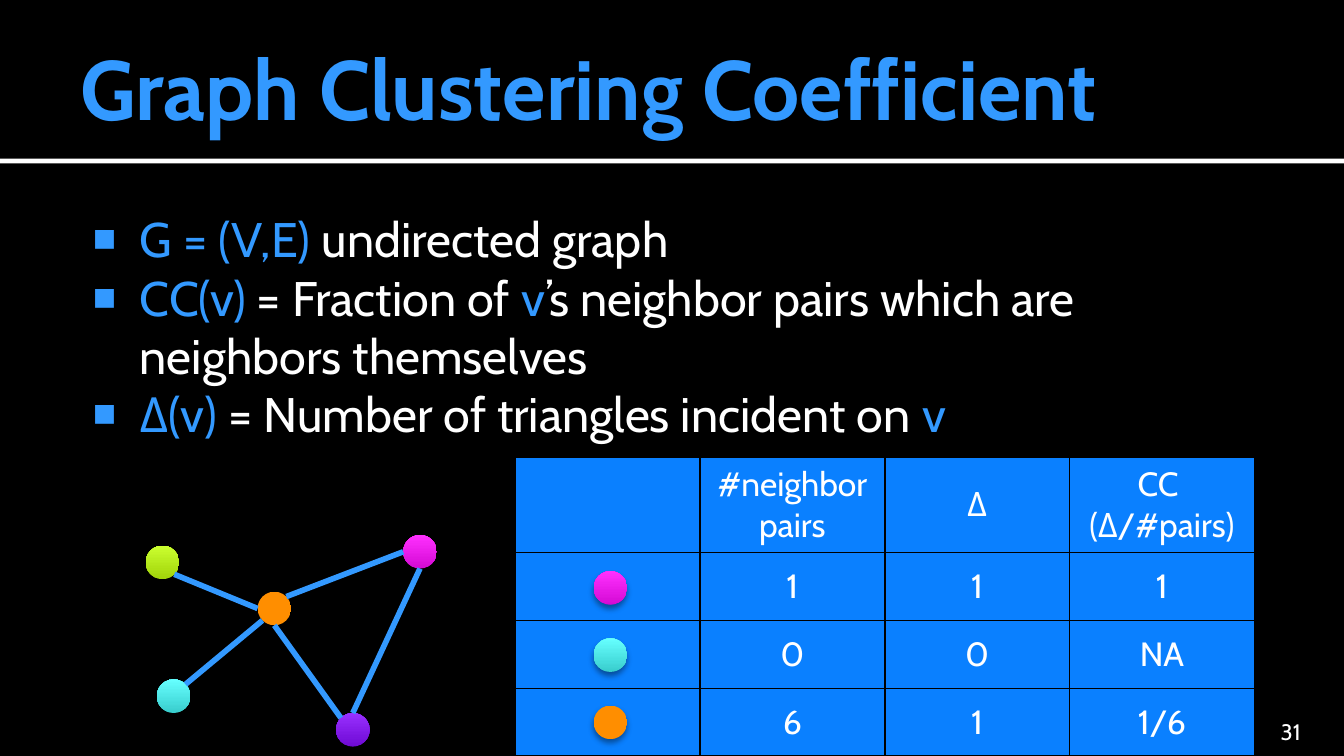
from lxml.etree import SubElement as Sub
from pptx import Presentation
from pptx.dml.color import RGBColor as RGB
from pptx.enum.shapes import MSO_CONNECTOR as Line, MSO_SHAPE as Kind
from pptx.enum.text import MSO_ANCHOR as Anchor, MSO_AUTO_SIZE as Auto, PP_ALIGN as Align
from pptx.oxml import parse_xml
from pptx.oxml.ns import nsdecls, qn
from pptx.util import Pt

HUE = {"black": "000000", "white": "FFFFFF", "blue": "3399FF", "cell": "0A80FF"}
# Each node colour runs from the bottom of the dot to its top.
NODE = {
    "orange": ("FF8E00", "FF8E00"),
    "purple": ("6F0AD4", "9830FF"),
    "pink": ("D40AD4", "FF30FF"),
    "cyan": ("38CDCD", "66FFFF"),
    "lime": ("A1D40A", "CBFF30"),
}
DOT = 18


def write(para, text, size, hue="white", bold=False):
    run = para.add_run()
    run.text = text
    form = {"name": "Cabin", "size": Pt(size), "bold": bold}
    for key, val in form.items():
        setattr(run.font, key, val)
    run.font.color.rgb = RGB.from_string(HUE[hue])


def add_dot(name, x, y):
    dot = slide.shapes.add_shape(Kind.OVAL, Pt(x), Pt(y), Pt(DOT), Pt(DOT))
    dot.fill.gradient()
    dot.fill.gradient_angle = 90
    for stop, tone in zip(dot.fill.gradient_stops, NODE[name]):
        stop.color.rgb = RGB.from_string(tone)
    dot.line.fill.background()
    dot.shadow.inherit = False
    dot._element.spPr.find(qn("a:effectLst")).append(parse_xml(
        f'<a:outerShdw {nsdecls("a")} blurRad="39000" dist="25400" dir="5400000" '
        'rotWithShape="0"><a:srgbClr val="000000"><a:alpha val="38000"/>'
        '</a:srgbClr></a:outerShdw>'))


deck = Presentation()
deck.slide_width, deck.slide_height = Pt(720), Pt(405)
slide = deck.slides.add_slide(deck.slide_layouts[1])
back = slide.background.fill
back.solid()
back.fore_color.rgb = RGB.from_string(HUE["black"])

# Rule under the title
rule = slide.shapes.add_shape(Kind.RECTANGLE, 0, Pt(85), Pt(720), Pt(2.6))
rule.fill.solid()
rule.fill.fore_color.rgb = RGB.from_string(HUE["white"])
rule.line.fill.background()
rule.shadow.inherit = False

# Text frames: place, insets (left, top, right, bottom), anchor
title, body = slide.placeholders
page = slide.shapes.add_textbox(0, 0, Pt(58), Pt(17))
frames = [
    (title, (36, 9.4, 648, 74), (7.2, 3.6, 3.6, 3.6), Anchor.MIDDLE),
    (body, (36, 105, 648, 273), (4.3, 7.2, 7.2, 3.6), Anchor.TOP),
    (page, (646, 382.3, 58, 16.6), (7.2, 3.6, 7.2, 0), Anchor.BOTTOM),
]
for box, place, inset, anchor in frames:
    for key, val in zip(("left", "top", "width", "height"), place):
        setattr(box, key, Pt(val))
    frame = box.text_frame
    form = {"word_wrap": True, "auto_size": Auto.NONE, "vertical_anchor": anchor}
    for key, val in form.items():
        setattr(frame, key, val)
    for side, val in zip(("left", "top", "right", "bottom"), inset):
        setattr(frame, "margin_" + side, Pt(val))

head = title.text_frame.paragraphs[0]
head.alignment = Align.LEFT
write(head, "Graph Clustering Coefficient", 45, "blue", True)
foot = page.text_frame.paragraphs[0]
foot.alignment = Align.RIGHT
write(foot, "31", 12)

# In each bullet, blue and white runs take turns.
bullets = [
    ("G = (V,E)", " undirected graph"),
    ("CC(v)", " = Fraction of ", "v", "’s neighbor pairs which are neighbors themselves"),
    ("Δ(v)", " = Number of triangles incident on ", "v"),
]
for i, parts in enumerate(bullets):
    para = body.text_frame.paragraphs[0] if i == 0 else body.text_frame.add_paragraph()
    para.space_before = Pt(0)
    props = para._p.get_or_add_pPr()
    props.set("marL", str(Pt(34.6)))
    props.set("indent", str(Pt(-25.2)))
    Sub(Sub(props, qn("a:buClr")), qn("a:srgbClr"), val=HUE["blue"])
    Sub(props, qn("a:buSzPct"), val="80000")
    Sub(props, qn("a:buChar"), char="■")
    for j, part in enumerate(parts):
        write(para, part, 26, ("blue", "white")[j % 2])

# Table of coefficients
rows = [
    ("", "#neighbor pairs", "Δ", "CC \n(Δ/#pairs)"),
    ("", "1", "1", "1"),
    ("", "0", "0", "NA"),
    ("", "6", "1", "1/6"),
]
table = slide.shapes.add_table(4, 4, Pt(276), Pt(244.8), Pt(396), Pt(160.2)).table
for col in table.columns:
    col.width = Pt(99)
for r, texts in enumerate(rows):
    table.rows[r].height = Pt(36.4 if r else 51)
    for c, text in enumerate(texts):
        cell = table.cell(r, c)
        cell.vertical_anchor = Anchor.MIDDLE
        props = cell._tc.get_or_add_tcPr()
        for side in ("lnL", "lnR", "lnT", "lnB"):
            edge = Sub(props, qn("a:" + side), w=str(Pt(1)))
            Sub(Sub(edge, qn("a:solidFill")), qn("a:srgbClr"), val=HUE["black"])
        cell.fill.solid()
        cell.fill.fore_color.rgb = RGB.from_string(HUE["cell"])
        for i, line in enumerate(text.split("\n") if text else []):
            para = cell.text_frame.paragraphs[0] if i == 0 else cell.text_frame.add_paragraph()
            para.alignment = Align.CENTER
            write(para, line, 18)

for i, name in enumerate(("pink", "cyan", "orange")):
    add_dot(name, 318, 306 + 36 * i)

# Graph: nodes, then edges between points on their rims
spots = {"orange": (138, 317), "purple": (180, 382), "pink": (216, 286.6),
         "cyan": (84, 364), "lime": (78, 292.3)}
for name, spot in spots.items():
    add_dot(name, *spot)

rim = {"n": (0, -1), "s": (0, 1), "w": (-1, 0), "ne": (0.71, -0.71),
       "nw": (-0.71, -0.71), "se": (0.71, 0.71), "sw": (-0.71, 0.71)}
edges = [
    ("orange", "ne", "pink", "w"),
    ("orange", "s", "purple", "nw"),
    ("pink", "s", "purple", "n"),
    ("cyan", "ne", "orange", "sw"),
    ("lime", "se", "orange", "w"),
]
for a, out, b, into in edges:
    ends = [Pt(at + DOT / 2 * (1 + way))
            for name, side in ((a, out), (b, into))
            for at, way in zip(spots[name], rim[side])]
    edge = slide.shapes.add_connector(Line.STRAIGHT, *ends)
    edge.line.width = Pt(3)
    edge.line.color.rgb = RGB.from_string(HUE["blue"])
    Sub(edge._element.spPr, qn("a:effectLst"))

deck.save("out.pptx")
